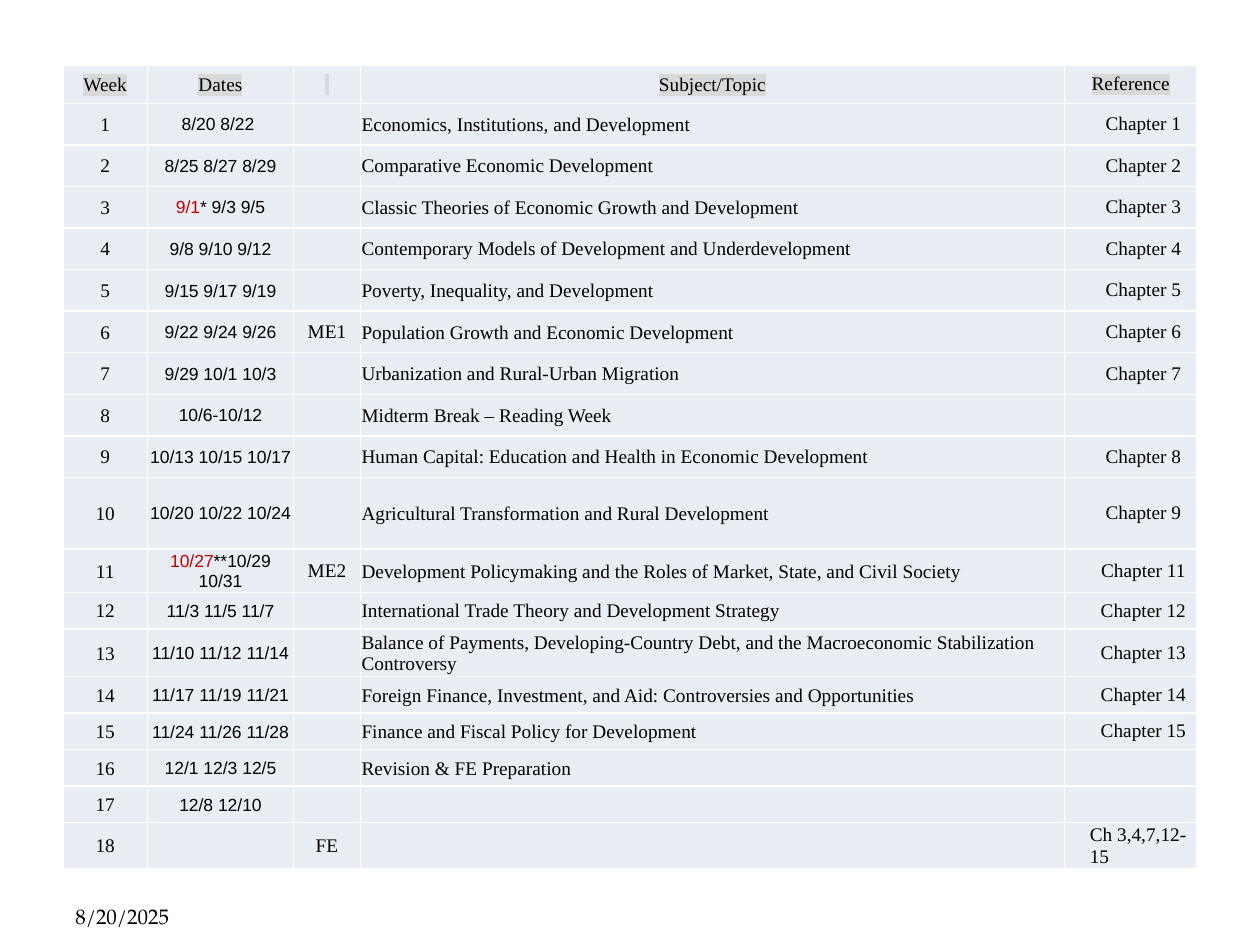
from lxml import etree
from pptx import Presentation
from pptx.dml.color import RGBColor
from pptx.enum.text import MSO_ANCHOR, PP_ALIGN
from pptx.oxml.ns import qn
from pptx.util import Inches, Pt

MIDDLE, BOTTOM = MSO_ANCHOR.MIDDLE, MSO_ANCHOR.BOTTOM
LEFT, CENTER = PP_ALIGN.LEFT, PP_ALIGN.CENTER

BLACK = RGBColor(0x00, 0x00, 0x00)
HOLIDAY_RED = RGBColor(0xC0, 0x00, 0x00)
CELL_BLUE = RGBColor(0xE9, 0xED, 0xF4)
BORDER_WHITE = RGBColor(0xFF, 0xFF, 0xFF)
HEADER_GREY = RGBColor(0xD9, 0xD9, 0xD9)

SERIF, SANS, FOOTER_FONT = "Times New Roman", "Arial", "TeX Gyre Pagella"

WEEK, DATES, EXAM, TOPIC, REFERENCE = range(5)
COLUMN_WIDTHS = [0.67, 1.16, 0.53, 5.59, 1.05]
ROW_HEIGHTS = [0.3] + [0.33] * 9 + [0.57] + [0.29] * 8

HEADINGS = ["Week", "Dates", " ", "Subject/Topic", "Reference"]
# Dates, exam, topic, reference; a bar ends the part of the dates that is a holiday.
WEEKS = [
    ("8/20 8/22 ", "", "Economics, Institutions, and Development", "Chapter 1"),
    ("8/25 8/27 8/29", "", "Comparative Economic Development", "Chapter 2"),
    ("9/1|* 9/3 9/5", "", "Classic Theories of Economic Growth and Development", "Chapter 3"),
    ("9/8 9/10 9/12", "", "Contemporary Models of Development and Underdevelopment", "Chapter 4"),
    ("9/15 9/17 9/19", "", "Poverty, Inequality, and Development", "Chapter 5"),
    ("9/22 9/24 9/26", "ME1", "Population Growth and Economic Development", "Chapter 6"),
    ("9/29 10/1 10/3", "", "Urbanization and Rural-Urban Migration", "Chapter 7"),
    ("10/6-10/12", "", "Midterm Break – Reading Week", ""),
    ("10/13 10/15 10/17", "", "Human Capital: Education and Health in Economic Development",
     "Chapter 8"),
    ("10/20 10/22 10/24", "", "Agricultural Transformation and Rural Development", "Chapter 9"),
    ("10/27|**10/29 10/31", "ME2",
     "Development Policymaking and the Roles of Market, State, and Civil Society", "Chapter 11"),
    ("11/3 11/5 11/7", "", "International Trade Theory and Development Strategy", "Chapter 12"),
    ("11/10 11/12 11/14", "",
     "Balance of Payments, Developing-Country Debt, and the Macroeconomic Stabilization Controversy",
     "Chapter 13"),
    ("11/17 11/19 11/21", "",
     "Foreign Finance, Investment, and Aid: Controversies and Opportunities", "Chapter 14"),
    ("11/24 11/26 11/28", "", "Finance and Fiscal Policy for Development", "Chapter 15"),
    ("12/1 12/3 12/5", "", "Revision & FE Preparation", ""),
    ("12/8 12/10", "", "", ""),
    ("", "FE", "", "Ch 3,4,7,12-15"),
]


def set_font(paragraph, name, size):
    paragraph.font.name = name
    paragraph.font.size = Pt(size)
    paragraph.font.color.rgb = BLACK


def add_color(parent, tag, color):
    holder = etree.SubElement(parent, qn(tag))
    etree.SubElement(holder, qn("a:srgbClr"), val=str(color))


def add_borders(cell):
    properties = cell._tc.get_or_add_tcPr()
    for position, side in enumerate(("a:lnL", "a:lnR", "a:lnT", "a:lnB")):
        line = etree.Element(qn(side), w=str(Pt(1)))
        add_color(line, "a:solidFill", BORDER_WHITE)
        properties.insert(position, line)


def style_cell(cell, column):
    inset = 0 if column in (EXAM, REFERENCE) else Inches(0.01)
    cell.margin_left = cell.margin_right = cell.margin_top = inset
    cell.margin_bottom = 0
    cell.vertical_anchor = MIDDLE
    cell.fill.solid()
    cell.fill.fore_color.rgb = CELL_BLUE
    add_borders(cell)


def fill_heading(cell, column, text):
    style_cell(cell, column)
    paragraph = cell.text_frame.paragraphs[0]
    paragraph.alignment = CENTER
    set_font(paragraph, SERIF, 11)
    run = paragraph.add_run()
    run.text = text
    add_color(run._r.get_or_add_rPr(), "a:highlight", HEADER_GREY)


def fill_entry(cell, column, text):
    style_cell(cell, column)
    paragraph = cell.text_frame.paragraphs[0]
    if not text:
        # Keeps an empty cell from stretching its row
        etree.SubElement(paragraph._p, qn("a:endParaRPr"), sz="1000")
        return
    is_list = column == REFERENCE and "," in text
    paragraph.alignment = LEFT if column == TOPIC or is_list else CENTER
    if column == REFERENCE:
        paragraph._p.get_or_add_pPr().set("marL", str(Inches(0.2)))
    set_font(paragraph, *((SANS, 10) if column == DATES else (SERIF, 11)))
    holiday, _, rest = text.rpartition("|")
    if holiday:
        run = paragraph.add_run()
        run.text = holiday
        run.font.color.rgb = HOLIDAY_RED
    paragraph.add_run().text = rest


def add_schedule(slide):
    table = slide.shapes.add_table(
        len(ROW_HEIGHTS), len(COLUMN_WIDTHS), Inches(0.5), Inches(0.52),
        Inches(sum(COLUMN_WIDTHS)), Inches(sum(ROW_HEIGHTS))).table
    table.first_row = table.horz_banding = False
    for column, width in zip(table.columns, COLUMN_WIDTHS):
        column.width = Inches(width)
    for row, height in zip(table.rows, ROW_HEIGHTS):
        row.height = Inches(height)
    for column, heading in enumerate(HEADINGS):
        fill_heading(table.cell(0, column), column, heading)
    for week, details in enumerate(WEEKS, start=1):
        for column, text in enumerate((str(week), *details)):
            fill_entry(table.cell(week, column), column, text)


def add_footer_date(slide, text):
    frame = slide.shapes.add_textbox(
        Inches(0.5), Inches(7.02), Inches(2.33), Inches(0.4)).text_frame
    frame.word_wrap = True
    frame.vertical_anchor = BOTTOM
    paragraph = frame.paragraphs[0]
    paragraph.text = text
    set_font(paragraph, FOOTER_FONT, 12)


def main():
    presentation = Presentation()
    presentation.slide_width = Inches(10)
    presentation.slide_height = Inches(7.5)
    slide = presentation.slides.add_slide(presentation.slide_layouts[6])
    add_footer_date(slide, "8/20/2025")
    add_schedule(slide)
    presentation.save("out.pptx")


if __name__ == "__main__":
    main()
